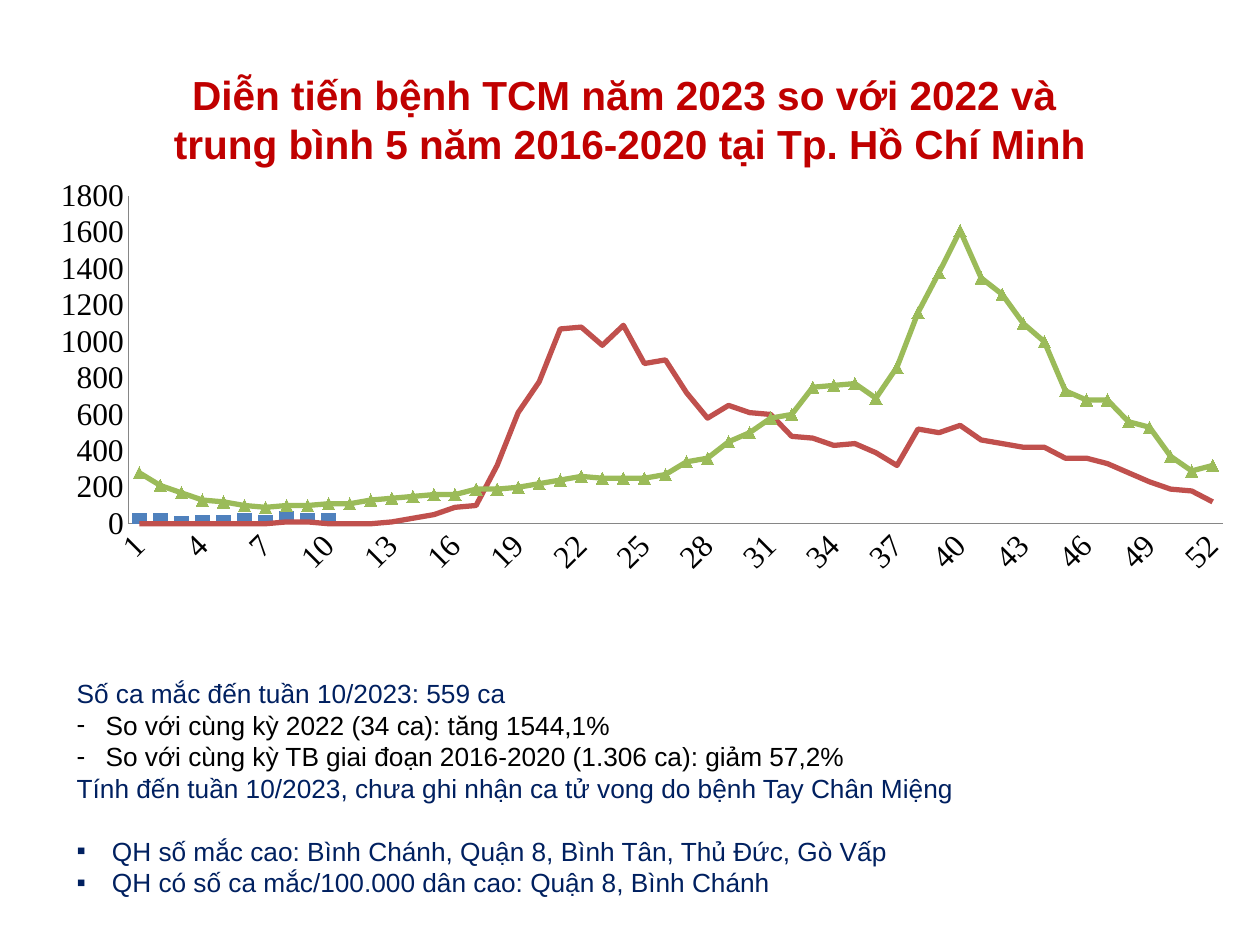
from lxml import etree
from pptx import Presentation, util as u
from pptx.chart.data import CategoryChartData
from pptx.dml.color import RGBColor
from pptx.enum import chart as ch, text as t
from pptx.oxml import parse_xml
from pptx.oxml.ns import nsdecls, qn

NAVY, BLACK, RED, GREY = "002060", "000000", "C00000", "868686"


def rgb(hex_colour):
    return RGBColor.from_string(hex_colour)


def add_text(paragraph, words, size=15, colour=NAVY, bold=False, bullet=None,
             indent=0, align=t.PP_ALIGN.LEFT, before=0):
    """Fill a paragraph; a vertical tab in the words is a line break."""
    paragraph.text = words
    paragraph.alignment = align
    paragraph.space_before = u.Pt(before)
    for run in paragraph.runs:
        run.font.size, run.font.bold, run.font.name = u.Pt(size), bold, "Arial"
        run.font.color.rgb = rgb(colour)
    if bullet:
        props = paragraph._p.get_or_add_pPr()
        props.set("marL", str(u.Inches(indent)))
        props.set("indent", str(-u.Inches(indent)))
        etree.SubElement(props, qn("a:buFont")).set("typeface", "Arial")
        etree.SubElement(props, qn("a:buChar")).set("char", bullet)


prs = Presentation()
prs.slide_width, prs.slide_height = u.Inches(10), u.Inches(7.5)
slide = prs.slides.add_slide(prs.slide_layouts[6])

# Title
title = slide.shapes.add_textbox(u.Inches(0), u.Inches(0.42), u.Inches(10), u.Inches(1.26)).text_frame
title.word_wrap = True
title.vertical_anchor = t.MSO_ANCHOR.MIDDLE
title.margin_bottom = u.Inches(0.26)
add_text(title.paragraphs[0],
         "Diễn tiến bệnh TCM năm 2023 so với 2022 và \vtrung bình 5 năm 2016-2020 tại Tp. Hồ Chí Minh",
         size=23.2, colour=RED, bold=True, align=t.PP_ALIGN.CENTER)

# Summary
summary = slide.shapes.add_textbox(u.Inches(0.51), u.Inches(5.33), u.Inches(9.49), u.Inches(1.87)).text_frame
summary.word_wrap = True
summary.auto_size = t.MSO_AUTO_SIZE.SHAPE_TO_FIT_TEXT
comparison = dict(colour=BLACK, bullet="-", indent=0.23)
district = dict(bullet="▪", indent=0.28, align=t.PP_ALIGN.JUSTIFY)
findings = [
    ("Số ca mắc đến tuần 10/2023: 559 ca", {}),
    ("So với cùng kỳ 2022 (34 ca): tăng 1544,1%", comparison),
    ("So với cùng kỳ TB giai đoạn 2016-2020 (1.306 ca): giảm 57,2%", comparison),
    ("Tính đến tuần 10/2023, chưa ghi nhận ca tử vong do bệnh Tay Chân Miệng", {}),
    ("QH số mắc cao: Bình Chánh, Quận 8, Bình Tân, Thủ Đức, Gò Vấp", dict(district, before=18)),
    ("QH có số ca mắc/100.000 dân cao: Quận 8, Bình Chánh", district),
]
for i, (words, style) in enumerate(findings):
    add_text(summary.add_paragraph() if i else summary.paragraphs[0], words, **style)

# Weekly cases
cases_2023 = [60, 60, 40, 50, 50, 60, 50, 70, 60, 60]
cases_2022 = [
    0, 0, 0, 0, 0, 0, 0, 10, 10, 0, 0, 0, 10, 30, 50, 90, 100, 320, 610, 780, 1070, 1080, 980, 1090, 880, 900,
    720, 580, 650, 610, 600, 480, 470, 430, 440, 390, 320, 520, 500, 540, 460, 440, 420, 420, 360, 360,
    330, 280, 230, 190, 180, 120]
five_year_mean = [
    280, 210, 170, 130, 120, 100, 90, 100, 100, 110, 110, 130, 140, 150, 160, 160, 190, 190, 200, 220, 240, 260,
    250, 250, 250, 270, 340, 360, 450, 500, 580, 600, 750, 760, 770, 690, 860, 1160, 1380, 1610, 1350, 1260,
    1100, 1000, 730, 680, 680, 560, 530, 370, 290, 320]
weeks = CategoryChartData()
weeks.categories = [str(week) for week in range(1, 53)]
weeks.add_series("2023", cases_2023 + [None] * (52 - len(cases_2023)))
weeks.add_series("2022", cases_2022)
weeks.add_series("TB 5 năm 2016-2020", five_year_mean)
chart = slide.shapes.add_chart(ch.XL_CHART_TYPE.COLUMN_CLUSTERED, u.Inches(0), u.Inches(1.33),
                               u.Inches(10.22), u.Inches(3.77), weeks).chart
chart.has_title = chart.has_legend = False
chart.font.size, chart.font.name = u.Pt(18), "Times New Roman"
chart.font.color.rgb = rgb(BLACK)

# The last two series become lines on the same axes
columns = chart.plots[0]
columns.gap_width, columns.overlap, columns.vary_by_categories = 44, 90, False
bar_xml = columns._element
line_xml = parse_xml(f'<c:lineChart {nsdecls("c")}><c:grouping val="standard"/><c:varyColors val="0"/></c:lineChart>')
for series_xml in bar_xml.findall(qn("c:ser"))[1:]:
    for bar_only in series_xml.findall(qn("c:invertIfNegative")):
        series_xml.remove(bar_only)
    line_xml.append(series_xml)
etree.SubElement(line_xml, qn("c:marker")).set("val", "1")
for axis_id in bar_xml.findall(qn("c:axId")):
    etree.SubElement(line_xml, qn("c:axId")).set("val", axis_id.get("val"))
bar_xml.addnext(line_xml)

bars = columns.series[0].format.fill
bars.solid()
bars.fore_color.rgb = rgb("4F81BD")
line_styles = [("C0504D", ch.XL_MARKER_STYLE.NONE), ("9BBB59", ch.XL_MARKER_STYLE.TRIANGLE)]
for series, (colour, marker) in zip(chart.plots[1].series, line_styles):
    series.smooth = False
    series.format.line.width = u.Pt(3)
    series.format.line.color.rgb = rgb(colour)
    series.marker.style, series.marker.size = marker, 7
    series.marker.format.fill.solid()
    series.marker.format.fill.fore_color.rgb = rgb(colour)
    series.marker.format.line.color.rgb = rgb(colour)

for axis in (chart.category_axis, chart.value_axis):
    axis.has_major_gridlines = False
    axis.major_tick_mark = axis.minor_tick_mark = ch.XL_TICK_MARK.NONE
    axis.format.line.color.rgb = rgb(GREY)
    axis.format.line.width = u.Pt(0.75)
    axis.tick_labels.font.size = u.Pt(18)
chart.value_axis.minimum_scale, chart.value_axis.maximum_scale = 0, 1800
chart.value_axis.major_unit = 200
week_axis = chart.category_axis._element
week_axis.find(qn("c:txPr")).find(qn("a:bodyPr")).set("rot", "-2700000")
week_axis.find(qn("c:noMultiLvlLbl")).addprevious(parse_xml(f'<c:tickLblSkip {nsdecls("c")} val="3"/>'))

# Fixed plot area
plot_area = chart._chartSpace.chart.plotArea
for layout in plot_area.findall(qn("c:layout")):
    plot_area.remove(layout)
bounds = [("layoutTarget", "inner"), ("xMode", "edge"), ("yMode", "edge"),
          ("x", 0.1), ("y", 0.06), ("w", 0.85), ("h", 0.69)]
layout = parse_xml(f'<c:layout {nsdecls("c")}><c:manualLayout/></c:layout>')
for tag, value in bounds:
    etree.SubElement(layout[0], qn(f"c:{tag}")).set("val", str(value))
plot_area.insert(0, layout)

prs.save("out.pptx")
